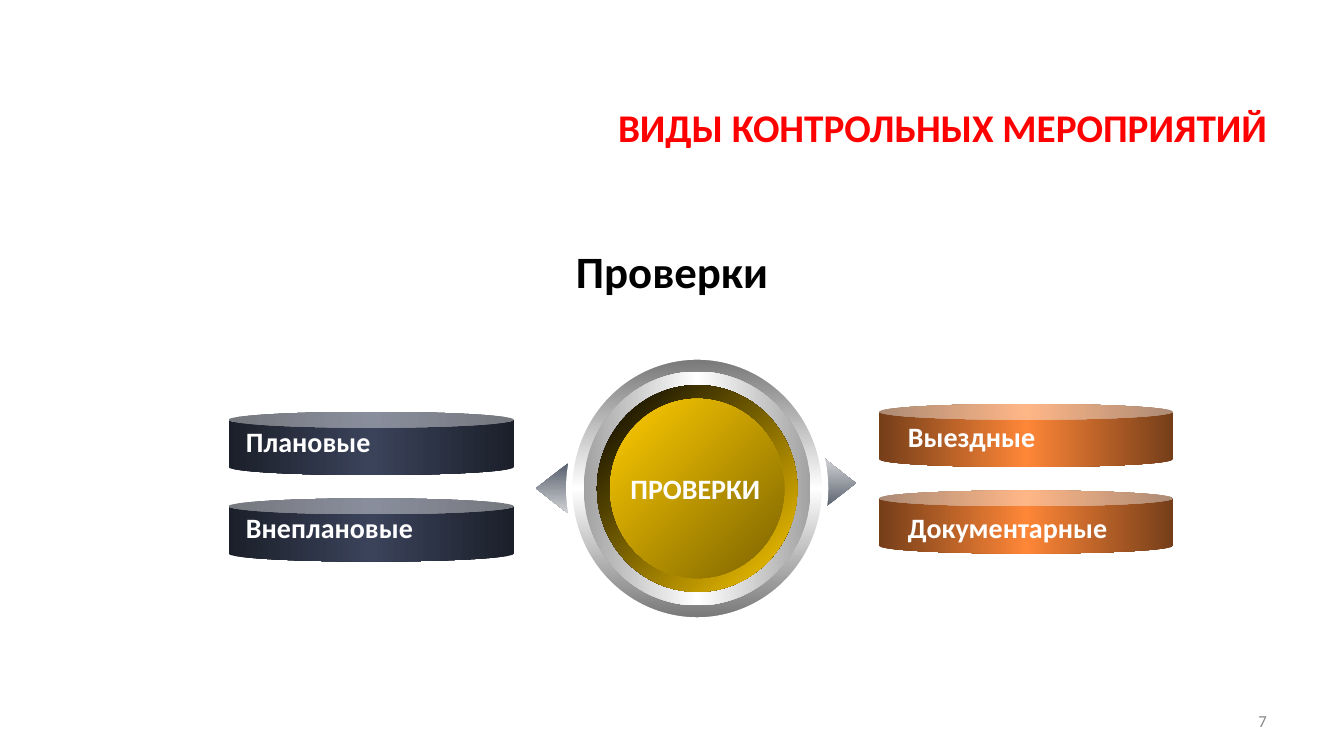
from dataclasses import dataclass

import lxml.etree
import pptx
import pptx.dml.color
import pptx.enum.shapes
import pptx.enum.text
import pptx.oxml.ns
import pptx.util

Cm = pptx.util.Cm
Kind = pptx.enum.shapes.MSO_SHAPE
Align = pptx.enum.text.PP_ALIGN
Anchor = pptx.enum.text.MSO_ANCHOR
qn = pptx.oxml.ns.qn


@dataclass(frozen=True)
class Theme:
    font: str = "Calibri"
    title_size: int = 28
    heading_size: int = 32
    label_size: int = 20
    number_size: int = 12
    title: str = "FF0000"
    heading: str = "000000"
    light: str = "FFFFFF"
    number: str = "898989"
    navy: tuple = ("1B1F2A", "3B435B", "1B1F2A")
    orange: tuple = ("753E19", "FE8637", "753E19")
    arrow: tuple = ("575F6D", "D2D3D5")
    outer_ring: tuple = ("767676", "FFFFFF", "767676")
    inner_ring: tuple = ("A2A2A2", "FFFFFF", "A2A2A2")
    gold_rim: tuple = ("000000", "FFCC00")
    gold_disc: tuple = ("FFCC00", "7C6300")


THEME = Theme()
ROW_PITCH = 2.18
CAN_HEIGHT = 1.59
LABEL_HEIGHT = 1.12
HUB_CENTRE = (17.57, 12.31)


def rgb(value):
    return pptx.dml.color.RGBColor.from_string(value)


def apply(target, values):
    for name, value in values.items():
        setattr(target, name, value)


def place(shape, box):
    lengths = [Cm(value) for value in box]
    apply(shape, dict(zip(("left", "top", "width", "height"), lengths)))


def remove_bullet(paragraph):
    properties = paragraph._p.get_or_add_pPr()
    properties.set("marL", "0")
    properties.set("indent", "0")
    lxml.etree.SubElement(properties, qn("a:buNone"))


def write(shape, text, size, color, align, bold=True, **frame_values):
    frame = shape.text_frame
    apply(frame, {"word_wrap": True, **frame_values})
    frame.text = text
    paragraph = frame.paragraphs[0]
    remove_bullet(paragraph)
    apply(paragraph, {"alignment": align, "space_before": pptx.util.Pt(0)})
    apply(paragraph.font, {"name": THEME.font, "size": pptx.util.Pt(size), "bold": bold})
    paragraph.font.color.rgb = rgb(color)


def add_text(slide, box, text, size, color, align, **values):
    text_box = slide.shapes.add_textbox(*[Cm(value) for value in box])
    write(text_box, text, size, color, align, **values)


def set_gradient(shape, colors, angle):
    shape.fill.gradient()
    shape.fill.gradient_angle = 0
    gradient = shape._element.spPr.find(qn("a:gradFill"))
    stops = gradient.find(qn("a:gsLst"))
    for stop in list(stops):
        stops.remove(stop)
    for index, color in enumerate(colors):
        position = 100000 * index // (len(colors) - 1)
        stop = lxml.etree.SubElement(stops, qn("a:gs"), pos=str(position))
        lxml.etree.SubElement(stop, qn("a:srgbClr"), val=color)
    direction = gradient.find(qn("a:lin"))
    direction.set("ang", str(angle * 60000))
    direction.set("scaled", "0")


def add_gradient_shape(slide, kind, box, colors, angle=0, adjustments=()):
    shape = slide.shapes.add_shape(kind, *[Cm(value) for value in box])
    shape.shadow.inherit = False
    shape.line.fill.background()
    set_gradient(shape, colors, angle)
    for index, value in enumerate(adjustments):
        shape.adjustments[index] = value
    return shape


def add_arrow(slide, left, top, rotation):
    arrow = add_gradient_shape(
        slide, Kind.UP_ARROW, (left, top, 1.27, 0.81), THEME.arrow, 0, (0.517, 1)
    )
    arrow.rotation = rotation
    arrow._element.spPr.find(qn("a:xfrm")).set("flipH", "1")


def add_disc(slide, width, height, colors, angle):
    centre_x, centre_y = HUB_CENTRE
    box = (centre_x - width / 2, centre_y - height / 2, width, height)
    return add_gradient_shape(slide, Kind.OVAL, box, colors, angle)


def add_hub(slide):
    outer = add_disc(slide, 6.45, 6.65, THEME.outer_ring, 90)
    outer.line.color.rgb = rgb(THEME.light)
    outer.line.width = pptx.util.Pt(4.5)
    add_disc(slide, 5.72, 5.89, THEME.inner_ring, 0)
    add_disc(slide, 5.05, 5.21, THEME.gold_rim, 45)
    add_disc(slide, 4.39, 4.52, THEME.gold_disc, 45)
    add_text(slide, (15.29, 11.76, 4.47, LABEL_HEIGHT), "ПРОВЕРКИ",
             THEME.label_size, THEME.light, Align.CENTER, word_wrap=False)


def add_can_column(slide, left, top, width, colors, labels, label_left, label_tops):
    for row, (label, label_top) in enumerate(zip(labels, label_tops)):
        box = (left, top + row * ROW_PITCH, width, CAN_HEIGHT)
        add_gradient_shape(slide, Kind.CAN, box, colors, 0, (0.25,))
        add_text(slide, (label_left, label_top, 6.15, LABEL_HEIGHT), label,
                 THEME.label_size, THEME.light, Align.LEFT)


def fill_placeholders(slide):
    title = slide.shapes.title
    place(title, (1.7, 0.74, 30.48, 3.18))
    write(title, "ВИДЫ КОНТРОЛЬНЫХ МЕРОПРИЯТИЙ", THEME.title_size, THEME.title,
          Align.RIGHT, vertical_anchor=Anchor.BOTTOM)
    body = slide.placeholders[1]
    place(body, (1.7, 4.45, 30.48, 12.57))
    write(body, "Проверки", THEME.heading_size, THEME.heading, Align.CENTER,
          vertical_anchor=Anchor.TOP, margin_top=Cm(1.68))


def main():
    presentation = pptx.Presentation()
    apply(presentation, {"slide_width": Cm(33.87), "slide_height": Cm(19.05)})
    slide = presentation.slides.add_slide(presentation.slide_layouts[1])
    fill_placeholders(slide)
    add_text(slide, (24.28, 17.65, 7.9, 1.02), "7", THEME.number_size, THEME.number,
             Align.RIGHT, bold=False, vertical_anchor=Anchor.MIDDLE)
    add_arrow(slide, 13.28, 11.9, 270)
    add_arrow(slide, 20.53, 11.77, 90)
    add_hub(slide)
    add_can_column(slide, 5.76, 10.38, 7.19, THEME.navy,
                   ("Плановые", "Внеплановые"), 5.95, (10.57, 12.75))
    add_can_column(slide, 22.15, 10.18, 7.42, THEME.orange,
                   ("Выездные", "Документарные"), 22.63, (10.44, 12.75))
    presentation.save("out.pptx")


if __name__ == "__main__":
    main()
